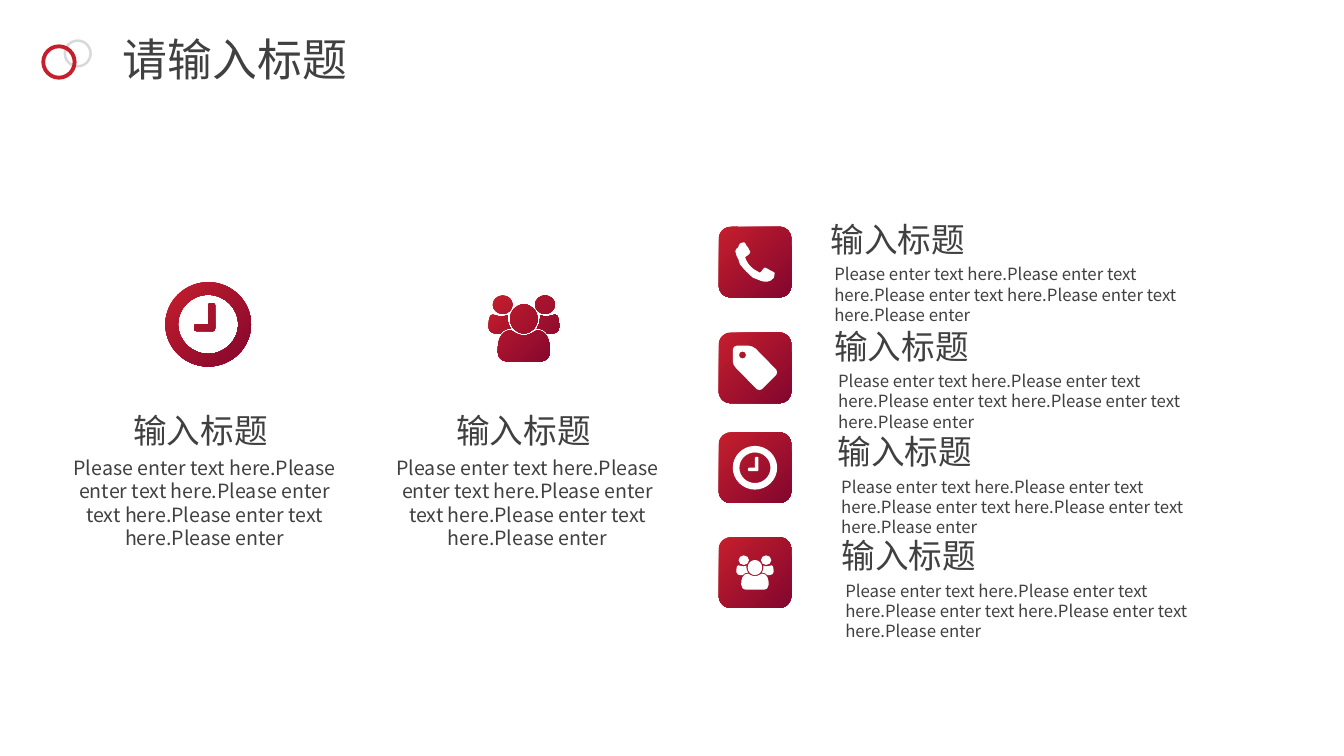
from dataclasses import dataclass
from typing import NamedTuple

import pptx
import pptx.dml.color
import pptx.enum.shapes
import pptx.enum.text
import pptx.oxml.ns
import pptx.util

Pt = pptx.util.Pt
qn = pptx.oxml.ns.qn
SHAPE = pptx.enum.shapes.MSO_SHAPE
ALIGN = pptx.enum.text.PP_ALIGN
AUTO = pptx.enum.text.MSO_AUTO_SIZE
ANCHOR = pptx.enum.text.MSO_ANCHOR

FONT = "Noto Sans CJK SC"
RED, WINE, GRAY, INK, WHITE = "C51F2D", "83062E", "D9D9D9", "404040", "FFFFFF"
HEADING = "输入标题"
BODY = "Please enter text here." * 4 + "Please enter"

Points = list[tuple[float, float]]


class Box(NamedTuple):
    left: float
    top: float
    width: float
    height: float


@dataclass
class Column:
    icon: list[Points]
    icon_box: Box
    heading_box: Box
    body_box: Box


@dataclass
class Item:
    icon: list[Points]
    icon_width: float
    icon_height: float
    badge_top: float
    text_left: float
    text_top: float


def outline(start: tuple[float, float], *segments: tuple[float, ...]) -> Points:
    pts = [start]
    for seg in segments:
        curve = seg if len(seg) == 6 else seg * 3
        pts += zip(curve[::2], curve[1::2])
    return pts


def ellipse(cx: float, cy: float, rx: float, ry: float) -> Points:
    kx, ky = 0.55 * rx, 0.55 * ry
    l, t, r, b = cx - rx, cy - ry, cx + rx, cy + ry
    return outline((r, cy), (r, cy + ky, cx + kx, b, cx, b), (cx - kx, b, l, cy + ky, l, cy),
                   (l, cy - ky, cx - kx, t, cx, t), (cx + kx, t, r, cy - ky, r, cy))


def mirror(pts: Points) -> Points:
    return [(100 - x, y) for x, y in pts]


CLOCK = [
    ellipse(50, 50, 50, 50),
    ellipse(50, 50, 35, 35),
    outline((58, 55), (58, 57, 58, 58, 56, 58), (36, 58), (34, 58, 34, 57, 34, 55),
            (34, 53), (34, 50, 34, 50, 36, 50), (50, 50), (50, 27),
            (50, 27, 50, 25, 52, 25), (56, 25), (58, 25, 58, 27, 58, 27)),
]
SIDE_HEAD = ellipse(20, 14, 14, 14)
SHOULDER = outline(
    (17, 57.5), (10, 57.5), (5.5, 57.5, 0, 54.5, 0, 48.5), (0, 42.5, 0, 29, 5.5, 29),
    (7, 29, 13, 32, 20, 32), (23, 32, 24, 32, 27, 30), (27, 32, 27, 33.5, 27, 35),
    (27, 39.5, 28.5, 45.5, 31.5, 50), (25.5, 50, 20, 53, 17, 57.5))
PEOPLE = [
    SIDE_HEAD, mirror(SIDE_HEAD), SHOULDER, mirror(SHOULDER),
    ellipse(50, 35.5, 19.5, 22),
    outline((73, 100), (27, 100), (18.5, 100, 13, 94, 13, 85), (13, 71, 16, 53, 31.5, 53),
            (34, 53, 39, 60.5, 50, 60.5), (61, 60.5, 66, 53, 68.5, 53),
            (84, 53, 87, 71, 87, 85), (87, 94, 81.5, 100, 73, 100)),
]
TAG = [
    outline((98, 66), (66, 98), (64, 100, 62, 100, 60, 100), (57, 100, 56, 100, 54, 98),
            (7, 50), (4, 47, 0, 41, 0, 36), (0, 9), (0, 4, 4, 0, 9, 0), (36, 0),
            (41, 0, 48, 3, 52, 7), (98, 54), (100, 56, 100, 57, 100, 60),
            (100, 62, 100, 64, 98, 66)),
    ellipse(22, 21, 8, 8),
]
PHONE = [
    outline((98, 90), (95, 92, 92, 95, 90, 97), (85, 100, 80, 100, 75, 100),
            (70, 100, 62, 97, 58, 95), (52, 92, 50, 92, 45, 90), (35, 82, 20, 67, 12, 56),
            (10, 51, 8, 46, 8, 44), (5, 36, 0, 31, 0, 23), (0, 18, 3, 15, 7, 13),
            (8, 8, 10, 5, 12, 3), (15, 0, 20, 0, 23, 0), (24, 1, 28, 5, 28, 8),
            (30, 10, 33, 13, 35, 18), (35, 20, 38, 22, 38, 24), (38, 31, 25, 36, 25, 38),
            (25, 41, 27, 44, 28, 46), (35, 59, 43, 67, 57, 74), (58, 76, 60, 77, 62, 77),
            (65, 77, 72, 64, 75, 64), (80, 64, 80, 67, 82, 67), (85, 69, 90, 72, 95, 74),
            (95, 76, 100, 76, 100, 77), (100, 80, 99, 85, 98, 90)),
]

COLUMNS = [
    Column(icon, icon_box, Box(x + 27.6, 289.4, 140.4, 36), Box(x, 321.8, 201.6, 74.9))
    for icon, icon_box, x in [
        (CLOCK, Box(118.1, 201.6, 61.2, 60.2), 45.4),
        (PEOPLE, Box(349, 211, 50.4, 47.2), 276.1),
    ]
]
ITEMS = [
    Item(PHONE, 28.1, 28.1, 162, 586.1, 152.6),
    Item(TAG, 31.7, 31.7, 237.6, 588.9, 229),
    Item(CLOCK, 31.7, 31.2, 308.9, 591.1, 304.6),
    Item(PEOPLE, 26.6, 24.5, 383.8, 594, 378.7),
]


def rgb(value: str) -> pptx.dml.color.RGBColor:
    return pptx.dml.color.RGBColor.from_string(value)


def paint(s, *colours: str) -> None:
    s.shadow.inherit = False
    s.line.fill.background()
    if len(colours) == 1:
        s.fill.solid()
        s.fill.fore_color.rgb = rgb(colours[0])
        return
    s.fill.gradient()
    s.fill.gradient_angle = 315
    for stop, colour in zip(s.fill.gradient_stops, colours):
        stop.color.rgb = rgb(colour)


def add_preset(shapes, kind, box: Box, *colours: str):
    s = shapes.add_shape(kind, *map(Pt, box))
    paint(s, *colours)
    return s


def add_icon(shapes, icon: list[Points], box: Box, *colours: str) -> None:
    contours = [[(Pt(box.left + x * box.width / 100), Pt(box.top + y * box.height / 100))
                 for x, y in pts] for pts in icon]
    fb = shapes.build_freeform(*contours[0][0])
    for i, pts in enumerate(contours):
        if i:
            fb.move_to(*pts[0])
        fb.add_line_segments(pts[1:], close=True)
    s = fb.convert_to_shape()
    lines = list(s._element.iter(qn("a:lnTo")))
    for i in range(0, len(lines), 3):
        curve = lines[i].makeelement(qn("a:cubicBezTo"), {})
        lines[i].addprevious(curve)
        for line in lines[i:i + 3]:
            curve.append(line[0])
            line.getparent().remove(line)
    paint(s, *colours)


def write(s, text: str, size: float, align=ALIGN.LEFT, wrap: bool = True) -> None:
    tf = s.text_frame
    p = tf.paragraphs[0]
    r = p.add_run()
    r.text = text
    formats = [
        (tf, {"word_wrap": wrap, "auto_size": AUTO.SHAPE_TO_FIT_TEXT, "vertical_anchor": ANCHOR.TOP}),
        (p, {"alignment": align, "line_spacing": Pt(size * 1.2)}),
        (r.font, {"size": Pt(size), "name": FONT}),
    ]
    for target, values in formats:
        for name, value in values.items():
            setattr(target, name, value)
    r.font.color.rgb = rgb(INK)
    ea = r.font._element.makeelement(qn("a:ea"), {"typeface": FONT})
    r.font._element.find(qn("a:latin")).addnext(ea)


def add_text(shapes, text: str, box: Box, size: float, align=ALIGN.LEFT) -> None:
    write(shapes.add_textbox(*map(Pt, box)), text, size, align)


def main() -> None:
    prs = pptx.Presentation()
    prs.slide_width, prs.slide_height = Pt(960), Pt(540)
    shapes = prs.slides.add_slide(prs.slide_layouts[5]).shapes

    title = shapes.title
    for name, value in zip(Box._fields, Box(80.6, 19.4, 176.4, 46.1)):
        setattr(title, name, Pt(value))
    write(title, "请输入标题", 32, wrap=False)

    rings = shapes.add_group_shape().shapes
    for box, thickness, colour in [(Box(45.4, 28.1, 20.2, 20.2), 0.09, GRAY),
                                   (Box(29.5, 31.7, 25.2, 25.2), 0.11, RED)]:
        add_preset(rings, SHAPE.DONUT, box, colour).adjustments[0] = thickness

    for item in ITEMS:
        badge = Box(513.4, item.badge_top, 51.8, 50.4)
        group = shapes.add_group_shape().shapes
        add_preset(group, SHAPE.ROUNDED_RECTANGLE, badge, RED, WINE)
        add_icon(group, item.icon, Box(badge.left + (badge.width - item.icon_width) / 2,
                                       badge.top + (badge.height - item.icon_height) / 2,
                                       item.icon_width, item.icon_height), WHITE)
        add_text(shapes, BODY, Box(item.text_left + 2.7, item.text_top + 32.5, 291.6, 36), 12)
        add_text(shapes, HEADING, Box(item.text_left, item.text_top, 291.6, 36), 24)

    for col in COLUMNS:
        add_icon(shapes, col.icon, col.icon_box, RED, WINE)
        add_text(shapes, BODY, col.body_box, 14, ALIGN.CENTER)
        add_text(shapes, HEADING, col.heading_box, 24, ALIGN.CENTER)

    prs.save("out.pptx")


if __name__ == "__main__":
    main()
